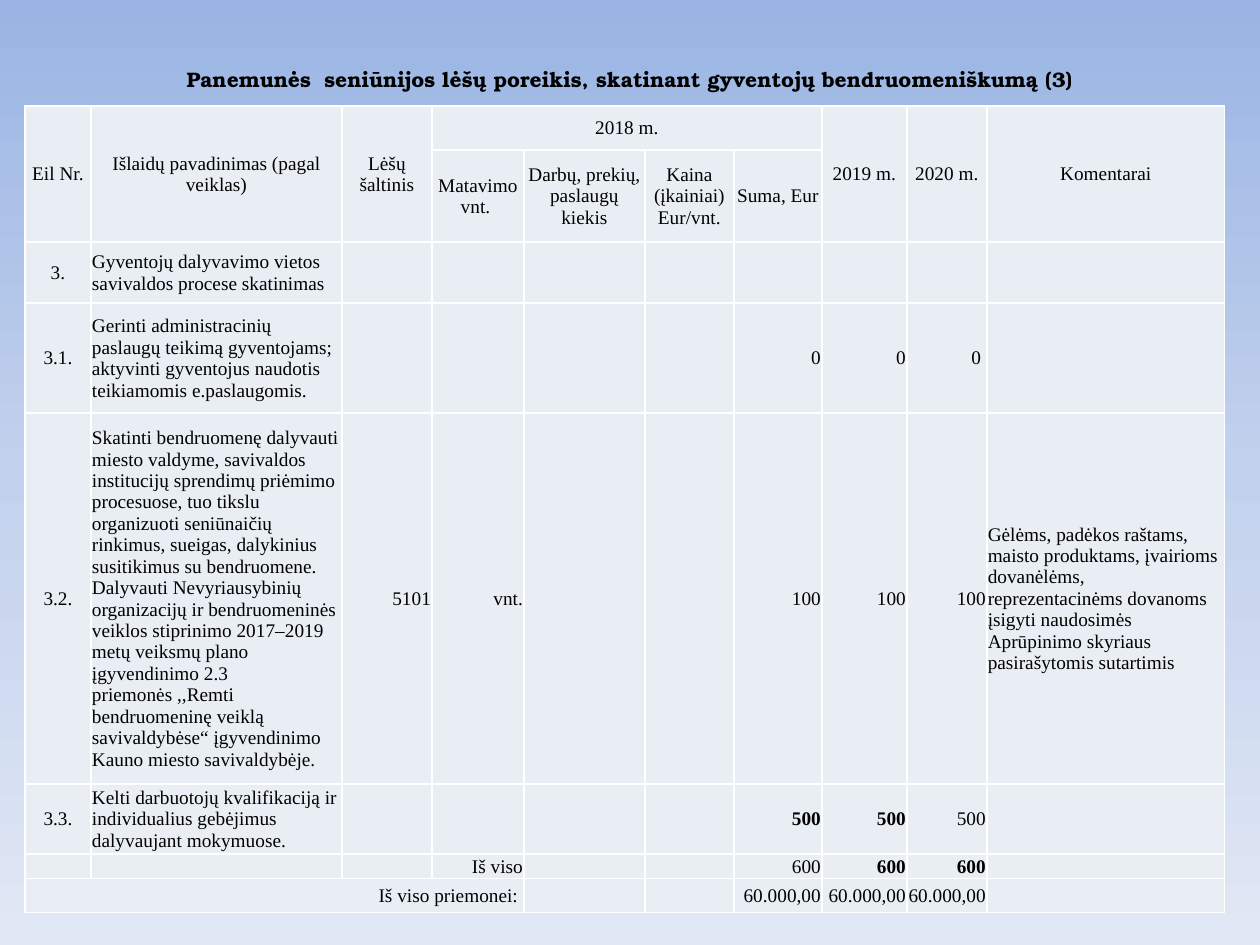
from copy import deepcopy
from dataclasses import dataclass

from lxml.etree import SubElement
from pptx import Presentation
from pptx.dml.color import RGBColor as Rgb
from pptx.enum.text import MSO_ANCHOR as Anchor, PP_ALIGN as Align
from pptx.oxml.ns import qn
from pptx.util import Emu, Pt


@dataclass(frozen=True)
class Theme:
    """Colours, fonts and type sizes of the slide."""
    ink: str = "000000"
    cell: str = "E9EDF4"
    border: str = "FFFFFF"
    sky: tuple = ((0, "9AB5E4"), (0.5, "C2D1ED"), (1, "E1E8F5"))
    title_font: str = "TeX Gyre Bonum"
    table_font: str = "Times New Roman"
    title_size: int = 12
    gap_size: int = 22
    table_size: int = 11
    border_width: int = 1


THEME = Theme()
PX_PER_INCH = 126
COLUMN_WIDTHS = (66, 251, 90, 92, 121, 89, 88, 85, 80, 238)
ROW_HEIGHTS = (44, 92, 61, 110, 347, 69, 22, 34)
MERGES = ((0, 0, 1, 0), (0, 1, 1, 1), (0, 2, 1, 2), (0, 3, 0, 6),
          (0, 7, 1, 7), (0, 8, 1, 8), (0, 9, 1, 9), (7, 0, 7, 3))
HEADER_ROWS = 2
TEXT_COLUMNS = (1, 9)
BOLD_CELLS = {(5, 6), (5, 7), (6, 7), (6, 8)}
TITLE_PARTS = (
    ("Panemunės", THEME.title_size),
    (" ", THEME.gap_size),
    ("seniūnijos lėšų poreikis, skatinant gyventojų bendruomeniškumą (3)", THEME.title_size),
)
BUDGET = (
    ("Eil Nr.", "Išlaidų pavadinimas (pagal veiklas)", "Lėšų šaltinis", "2018 m.",
     "", "", "", "2019 m.", "2020 m.", "Komentarai"),
    ("", "", "", "Matavimo vnt. ", "Darbų, prekių, paslaugų kiekis",
     "Kaina (įkainiai) Eur/vnt.", "Suma, Eur", "", "", ""),
    ("3.", "Gyventojų dalyvavimo vietos savivaldos procese skatinimas",
     "", "", "", "", "", "", "", ""),
    ("3.1.", "Gerinti administracinių paslaugų teikimą gyventojams; aktyvinti "
     "gyventojus naudotis teikiamomis e.paslaugomis.",
     "", "", "", "", "0", " 0", "0 ", ""),
    ("3.2.", "Skatinti bendruomenę dalyvauti miesto valdyme, savivaldos institucijų "
     "sprendimų priėmimo procesuose, tuo tikslu organizuoti seniūnaičių rinkimus, "
     "sueigas, dalykinius susitikimus su bendruomene. Dalyvauti Nevyriausybinių "
     "organizacijų ir bendruomeninės veiklos stiprinimo 2017–2019 metų veiksmų plano "
     "įgyvendinimo 2.3 priemonės ,,Remti bendruomeninę veiklą savivaldybėse“ "
     "įgyvendinimo Kauno miesto savivaldybėje.",
     "5101", "vnt.", "", "", "100", " 100", " 100",
     "Gėlėms, padėkos raštams, maisto produktams, įvairioms dovanėlėms, "
     "reprezentacinėms dovanoms įsigyti naudosimės Aprūpinimo skyriaus "
     "pasirašytomis sutartimis"),
    ("3.3.", "Kelti darbuotojų kvalifikaciją ir individualius gebėjimus "
     "dalyvaujant mokymuose.", "", "", "", "", "500", "500", "500", ""),
    ("", "", "", "Iš viso", "", "", "600", "600", "600", ""),
    ("Iš viso priemonei: ", "", "", "", "", "",
     "60.000,00", "60.000,00", "60.000,00", ""),
)


def px(length):
    """Turn pixels into EMU."""
    return Emu(round(length * 914400 / PX_PER_INCH))


def set_font(run, name, size, bold):
    """Set the typeface, size, weight and colour of a run."""
    run.font.name = name
    run.font.size = Pt(size)
    run.font.bold = bold
    run.font.color.rgb = Rgb.from_string(THEME.ink)


def paint_background(slide):
    """Fill the background with a vertical three-stop gradient."""
    fill = slide.background.fill
    fill.gradient()
    fill.gradient_angle = 270
    stop_list = next(slide.element.iter(qn("a:gsLst")))
    stop_list.append(deepcopy(stop_list[-1]))
    for stop, (position, color) in zip(fill.gradient_stops, THEME.sky):
        stop.color.rgb = Rgb.from_string(color)
        stop.position = position


def add_title(slide):
    """Add the centred heading."""
    frame = slide.shapes.add_textbox(px(63), px(38), px(1134), px(68)).text_frame
    frame.word_wrap = True
    frame.vertical_anchor = Anchor.MIDDLE
    heading = frame.paragraphs[0]
    heading.alignment = Align.CENTER
    for wording, size in TITLE_PARTS:
        run = heading.add_run()
        run.text = wording
        set_font(run, THEME.title_font, size, True)


def add_borders(cell):
    """Draw the four borders of a cell."""
    properties = cell._tc.get_or_add_tcPr()
    for side in ("a:lnL", "a:lnR", "a:lnT", "a:lnB"):
        line = SubElement(properties, qn(side), w=str(Pt(THEME.border_width)))
        fill = SubElement(line, qn("a:solidFill"))
        SubElement(fill, qn("a:srgbClr"), val=THEME.border)


def alignment_of(row, column):
    """Choose the alignment that a cell's place calls for."""
    if row < HEADER_ROWS:
        return Align.CENTER
    if column in TEXT_COLUMNS:
        return Align.LEFT
    if column == 0 and row < len(BUDGET) - 1:
        return Align.CENTER
    return Align.RIGHT


def fill_cell(cell, wording, alignment, bold):
    """Style a cell and write its wording."""
    add_borders(cell)
    cell.fill.solid()
    cell.fill.fore_color.rgb = Rgb.from_string(THEME.cell)
    cell.margin_left = cell.margin_right = cell.margin_top = px(1)
    cell.margin_bottom = 0
    cell.vertical_anchor = Anchor.MIDDLE
    cell.text_frame.text = wording
    paragraph = cell.text_frame.paragraphs[0]
    paragraph.alignment = alignment
    for run in paragraph.runs:
        set_font(run, THEME.table_font, THEME.table_size, bold)
    if not wording:
        SubElement(paragraph._p, qn("a:endParaRPr"), sz=str(THEME.table_size * 100))


def add_budget(slide):
    """Add the table of funds by activity and year."""
    table = slide.shapes.add_table(
        len(ROW_HEIGHTS), len(COLUMN_WIDTHS), px(25), px(106),
        px(sum(COLUMN_WIDTHS)), px(sum(ROW_HEIGHTS))).table
    for column, width in zip(table.columns, COLUMN_WIDTHS):
        column.width = px(width)
    for row, height in zip(table.rows, ROW_HEIGHTS):
        row.height = px(height)
    for row, wordings in enumerate(BUDGET):
        for column, wording in enumerate(wordings):
            fill_cell(table.cell(row, column), wording,
                      alignment_of(row, column), (row, column) in BOLD_CELLS)
    for top, left, bottom, right in MERGES:
        table.cell(top, left).merge(table.cell(bottom, right))


def main():
    """Build the slide and save it."""
    deck = Presentation()
    deck.slide_width, deck.slide_height = px(1260), px(945)
    slide = deck.slides.add_slide(deck.slide_layouts[6])
    paint_background(slide)
    add_title(slide)
    add_budget(slide)
    deck.save("out.pptx")


if __name__ == "__main__":
    main()
